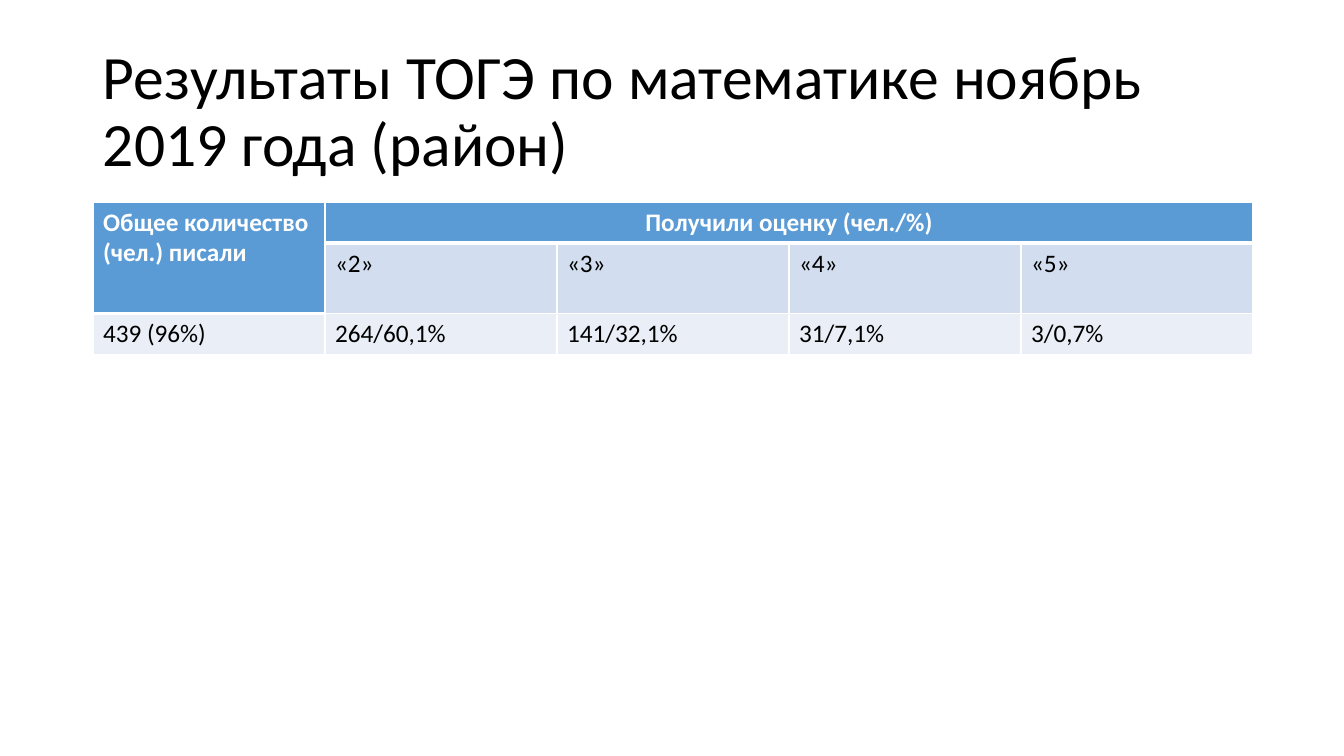
import pptx
import pptx.util
import pptx.dml.color
import pptx.enum.text
import pptx.oxml
import pptx.oxml.ns

RGBColor = pptx.dml.color.RGBColor
PP_ALIGN = pptx.enum.text.PP_ALIGN
MSO_ANCHOR = pptx.enum.text.MSO_ANCHOR

WHITE = RGBColor(0xFF, 0xFF, 0xFF)
BLACK = RGBColor(0x00, 0x00, 0x00)
BLUE = RGBColor(0x5B, 0x9B, 0xD5)
BAND_DARK = RGBColor(0xD2, 0xDE, 0xEF)
BAND_LIGHT = RGBColor(0xEA, 0xEF, 0xF7)

PX = 12192000 / 1344  # EMU in one px


def px(*lengths):
    return [pptx.util.Emu(round(n * PX)) for n in lengths]


def write(p, text, color, size, bold=False):
    r = p.add_run()
    r.text = text
    r.font.color.rgb = color
    font = {"name": "Calibri", "size": pptx.util.Pt(size), "bold": bold}
    for key, value in font.items():
        setattr(r.font, key, value)


prs = pptx.Presentation()
prs.slide_width, prs.slide_height = px(1344, 756)
s = prs.slides.add_slide(prs.slide_layouts[6])

# Title
tf = s.shapes.add_textbox(*px(93, 40, 1159, 146)).text_frame
tf.word_wrap = True
tf.vertical_anchor = MSO_ANCHOR.MIDDLE
p = tf.paragraphs[0]
p.line_spacing = 0.9
write(p, "Результаты ТОГЭ по математике ноябрь 2019 года (район)", BLACK, 44)

# Table of grades
rows = [
    ["Общее количество (чел.) писали", "Получили оценку (чел./%)", "", "", ""],
    ["", "«2»", "«3»", "«4»", "«5»"],
    ["439 (96%)", "264/60,1%", "141/32,1%", "31/7,1%", "3/0,7%"],
]
fills = [BLUE, BAND_DARK, BAND_LIGHT]
table = s.shapes.add_table(3, 5, *px(93, 202, 1160, 123)).table
for col in table.columns:
    col.width = px(232)[0]
for row in table.rows:
    row.height = px(41)[0]
table.cell(0, 0).merge(table.cell(1, 0))
table.cell(0, 1).merge(table.cell(0, 4))

for i, texts in enumerate(rows):
    for j, text in enumerate(texts):
        cell = table.cell(i, j)
        last_header_row = 1 if j == 0 else 0
        header = i <= last_header_row
        cell.fill.solid()
        cell.fill.fore_color.rgb = BLUE if header else fills[i]
        if text:
            p = cell.text_frame.paragraphs[0]
            if header and j:
                p.alignment = PP_ALIGN.CENTER
            write(p, text, WHITE if header else BLACK, 18, header)

        # White borders, thicker below the header
        widths = {
            "L": 1,
            "R": 1,
            "T": 3 if i == last_header_row + 1 else 1,
            "B": 3 if header else 1,
        }
        tcPr = cell._tc.get_or_add_tcPr()
        for k, (side, width) in enumerate(widths.items()):
            tcPr.insert(k, pptx.oxml.parse_xml(
                f'<a:ln{side} {pptx.oxml.ns.nsdecls("a")} w="{width * 12700}">'
                f'<a:solidFill><a:srgbClr val="{WHITE}"/></a:solidFill></a:ln{side}>'))

prs.save("out.pptx")
